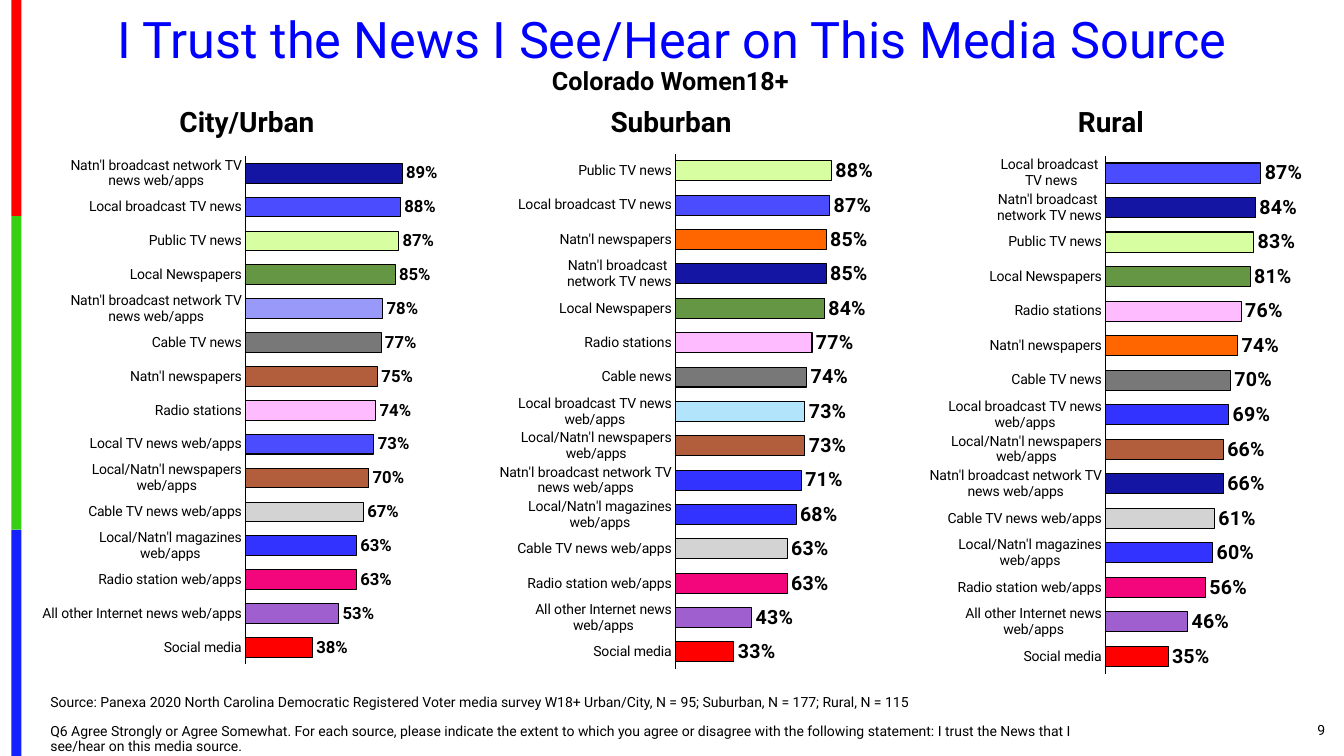
import pptx
import pptx.chart.data
import pptx.dml.color
import pptx.enum.chart
import pptx.enum.shapes
import pptx.enum.text
import pptx.oxml
import pptx.oxml.ns
import pptx.util

Cm, Pt = pptx.util.Cm, pptx.util.Pt
ALIGN, ANCHOR = pptx.enum.text.PP_ALIGN, pptx.enum.text.MSO_ANCHOR
FONT = "Roboto"
COLORS = {
    "black": "000000", "title": "0000FF",
    "stripe red": "FE0000", "stripe green": "36CF12", "stripe blue": "1322FE",
    "red": "FF0000", "purple": "9F5FCF", "pink": "F3057C", "silver": "D3D3D3",
    "blue": "3333FF", "navy": "1515A3", "brown": "B25E3C", "sky": "B2E5FC",
    "gray": "787878", "lilac": "FFBBFF", "green": "659643", "orange": "FF6600",
    "indigo": "4C4CFF", "lime": "D7FFA1", "lavender": "9999F9",
}


def rgb(name):
    return pptx.dml.color.RGBColor.from_string(COLORS[name])


def set_text(sp, text, size, align, anchor=ANCHOR.TOP, bold=False, color="black", spacing=1.0):
    tf = sp.text_frame
    tf.word_wrap = True
    tf.auto_size = pptx.enum.text.MSO_AUTO_SIZE.NONE
    tf.vertical_anchor = anchor
    tf.text = text
    for i, p in enumerate(tf.paragraphs):
        p.alignment = align
        p.line_spacing = spacing
        p.space_before = Pt(10 if i else 0)
        for r in p.runs:
            r.font.name, r.font.size, r.font.bold = FONT, Pt(size), bold
            r.font.color.rgb = rgb(color)


prs = pptx.Presentation()
prs.slide_width, prs.slide_height = Cm(33.87), Cm(19.05)
s = prs.slides.add_slide(prs.slide_layouts[5])

# Stripes down the left edge
top = 0
for name, height in [("stripe red", 5.45), ("stripe green", 7.9), ("stripe blue", 5.7)]:
    sp = s.shapes.add_shape(pptx.enum.shapes.MSO_SHAPE.RECTANGLE,
                            Cm(0.29), Cm(top), Cm(0.25), Cm(height))
    sp.shadow.inherit = False
    sp.fill.solid()
    sp.fill.fore_color.rgb = rgb(name)
    sp.line.fill.background()
    top += height

# Title and subtitle
title = s.shapes.title
title.left, title.top, title.width, title.height = Cm(1.17), Cm(0.23), Cm(31.55), Cm(1.65)
set_text(title, "I Trust the News I See/Hear on This Media Source", 36, ALIGN.CENTER,
         ANCHOR.MIDDLE, color="title", spacing=0.9)
sp = s.shapes.add_textbox(Cm(8.41), Cm(1.52), Cm(16.97), Cm(1.02))
set_text(sp, "Colorado Women18+", 18, ALIGN.CENTER, bold=True)

# Panels: heading, heading left, chart left, chart height, label size, plot area, bars from top
panels = [
    ("City/Urban", 3.0, 1.07, 13.41, 12, (0.479, 0.023, 0.462, 0.955), [
        ("Natn'l broadcast network TV news web/apps", 0.89, "navy"),
        ("Local broadcast TV news", 0.88, "indigo"),
        ("Public TV news", 0.87, "lime"),
        ("Local Newspapers", 0.85, "green"),
        ("Natn'l broadcast network TV news web/apps", 0.78, "lavender"),
        ("Cable TV news", 0.77, "gray"),
        ("Natn'l newspapers", 0.75, "brown"),
        ("Radio stations", 0.74, "lilac"),
        ("Local TV news web/apps", 0.73, "indigo"),
        ("Local/Natn'l newspapers web/apps", 0.70, "brown"),
        ("Cable TV news web/apps", 0.67, "silver"),
        ("Local/Natn'l magazines web/apps", 0.63, "blue"),
        ("Radio station web/apps", 0.63, "pink"),
        ("All other Internet news web/apps", 0.53, "purple"),
        ("Social media", 0.38, "red"),
    ]),
    ("Suburban", 13.69, 11.99, 13.49, 14, (0.474, 0.018, 0.463, 0.963), [
        ("Public TV news", 0.88, "lime"),
        ("Local broadcast TV news", 0.87, "indigo"),
        ("Natn'l newspapers", 0.85, "orange"),
        ("Natn'l broadcast \nnetwork TV news", 0.85, "navy"),
        ("Local Newspapers", 0.84, "green"),
        ("Radio stations", 0.77, "lilac"),
        ("Cable news", 0.74, "gray"),
        ("Local broadcast TV news web/apps", 0.73, "sky"),
        ("Local/Natn'l newspapers web/apps", 0.73, "brown"),
        ("Natn'l broadcast network TV news web/apps", 0.71, "blue"),
        ("Local/Natn'l magazines web/apps", 0.68, "blue"),
        ("Cable TV news web/apps", 0.63, "silver"),
        ("Radio station web/apps", 0.63, "pink"),
        ("All other Internet news web/apps", 0.43, "purple"),
        ("Social media", 0.33, "red"),
    ]),
    ("Rural", 24.77, 22.83, 13.44, 14, (0.474, 0.022, 0.466, 0.971), [
        ("Local broadcast \nTV news", 0.87, "indigo"),
        ("Natn'l broadcast \nnetwork TV news", 0.84, "navy"),
        ("Public TV news", 0.83, "lime"),
        ("Local Newspapers", 0.81, "green"),
        ("Radio stations", 0.76, "lilac"),
        ("Natn'l newspapers", 0.74, "orange"),
        ("Cable TV news", 0.70, "gray"),
        ("Local broadcast TV news web/apps", 0.69, "blue"),
        ("Local/Natn'l newspapers web/apps", 0.66, "brown"),
        ("Natn'l broadcast network TV news web/apps", 0.66, "navy"),
        ("Cable TV news web/apps", 0.61, "silver"),
        ("Local/Natn'l magazines web/apps", 0.60, "blue"),
        ("Radio station web/apps", 0.56, "pink"),
        ("All other Internet news web/apps", 0.46, "purple"),
        ("Social media", 0.35, "red"),
    ]),
]

for heading, heading_left, chart_left, chart_height, label_size, plot_area, bars in panels:
    sp = s.shapes.add_textbox(Cm(heading_left), Cm(2.51), Cm(6.45), Cm(1.12))
    set_text(sp, heading, 20, ALIGN.CENTER, bold=True)

    # The first category is drawn at the bottom
    bars = bars[::-1]
    data = pptx.chart.data.CategoryChartData(number_format="0%")
    data.categories = [label for label, value, color in bars]
    data.add_series("Series 1", [value for label, value, color in bars])
    chart = s.shapes.add_chart(pptx.enum.chart.XL_CHART_TYPE.BAR_CLUSTERED, Cm(chart_left),
                               Cm(3.63), Cm(10.62), Cm(chart_height), data).chart
    chart.has_legend = chart.has_title = False
    chart.font.name, chart.font.size = FONT, Pt(10)
    chart.font.color.rgb = rgb("black")

    # Axes
    val_axis, cat_axis = chart.value_axis, chart.category_axis
    val_axis.minimum_scale, val_axis.maximum_scale = 0, 1.1
    val_axis.has_major_gridlines = val_axis.visible = False
    cat_axis.major_tick_mark = pptx.enum.chart.XL_TICK_MARK.NONE
    cat_axis.format.line.color.rgb = rgb("black")
    cat_axis.format.line.width = Pt(0.75)

    # Bars and their labels
    plot = chart.plots[0]
    plot.gap_width = 72
    plot.vary_by_categories = False
    for i, (label, value, color) in enumerate(bars):
        fmt = plot.series[0].points[i].format
        fmt.fill.solid()
        fmt.fill.fore_color.rgb = rgb(color)
        fmt.line.color.rgb = rgb("black")
        fmt.line.width = Pt(0.75)
    plot.has_data_labels = True
    labels = plot.data_labels
    labels.show_value = True
    labels.number_format, labels.number_format_is_linked = "0%", False
    labels.position = pptx.enum.chart.XL_LABEL_POSITION.OUTSIDE_END
    labels.font.name, labels.font.size, labels.font.bold = FONT, Pt(label_size), True
    labels.font.color.rgb = rgb("black")

    # Fixed inner plot area
    settings = [("layoutTarget", "inner"), ("xMode", "edge"), ("yMode", "edge")]
    settings += zip("xywh", plot_area)
    items = "".join(f'<c:{tag} val="{val}"/>' for tag, val in settings)
    area = chart.element.chart.plotArea
    for old in area.findall(pptx.oxml.ns.qn("c:layout")):
        area.remove(old)
    area.insert(0, pptx.oxml.parse_xml(
        f'<c:layout {pptx.oxml.ns.nsdecls("c")}><c:manualLayout>{items}</c:manualLayout></c:layout>'))

# Source note and page number
sp = s.shapes.add_textbox(Cm(1.02), Cm(17.37), Cm(26.39), Cm(1.78))
set_text(sp, "Source: Panexa 2020 North Carolina Democratic Registered Voter media survey W18+ "
         "Urban/City, N = 95; Suburban, N = 177; Rural, N = 115\n"
         "Q6 Agree Strongly or Agree Somewhat. For each source, please indicate the extent to which "
         "you agree or disagree with the following statement: I trust the News that I see/hear on "
         "this media source.", 10, ALIGN.LEFT, ANCHOR.BOTTOM, spacing=0.9)
sp = s.shapes.add_textbox(Cm(30.91), Cm(17.88), Cm(2.74), Cm(1.02))
set_text(sp, "9", 10, ALIGN.RIGHT, ANCHOR.MIDDLE)

prs.save("out.pptx")
